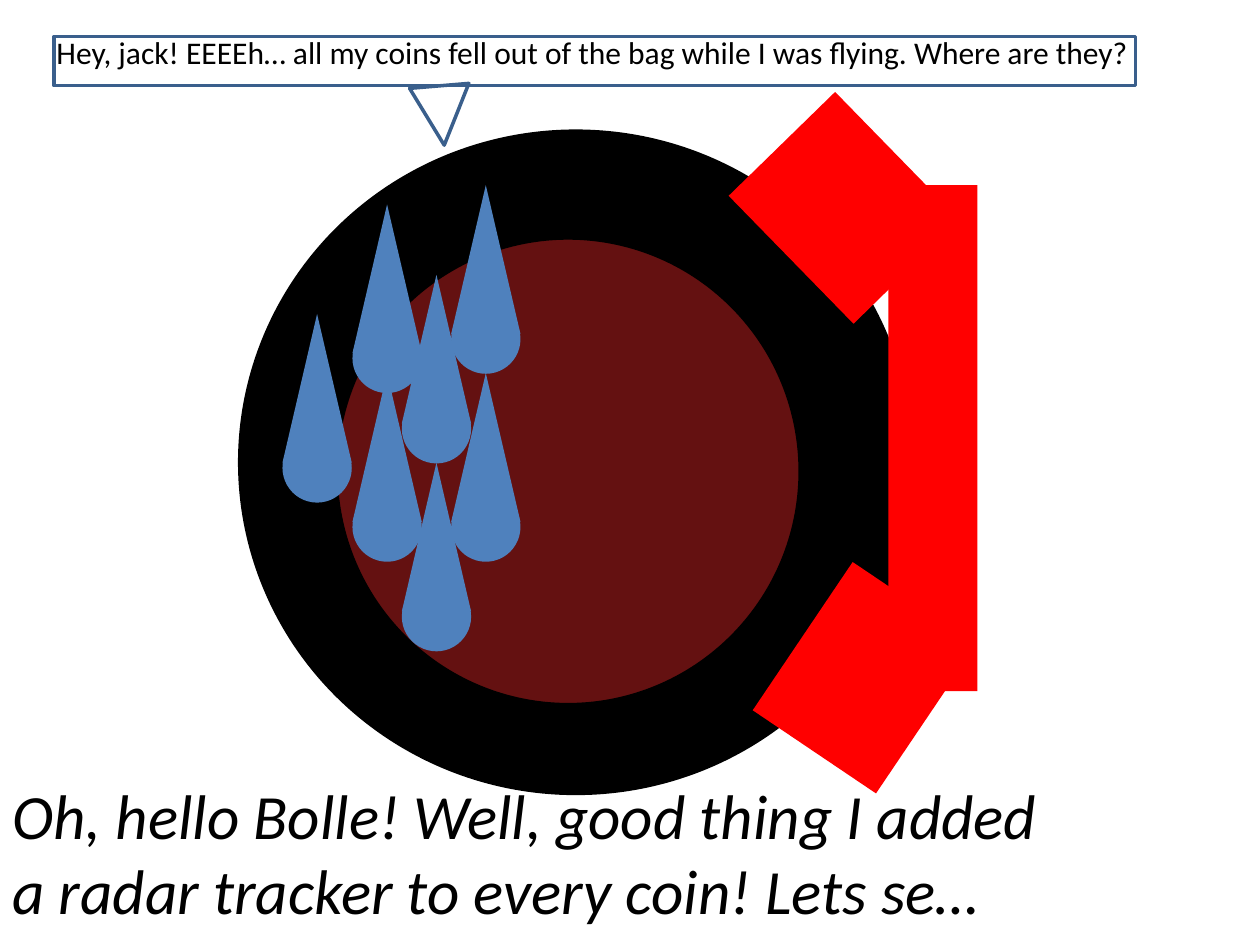
from pptx import Presentation
from pptx.dml.color import RGBColor
from pptx.enum.shapes import MSO_SHAPE
from pptx.enum.text import MSO_AUTO_SIZE
from pptx.util import Pt

BLACK = RGBColor(0x00, 0x00, 0x00)
MAROON = RGBColor(0x64, 0x11, 0x11)
RED = RGBColor(0xFF, 0x00, 0x00)
DROP_BLUE = RGBColor(0x4F, 0x81, 0xBD)
OUTLINE_BLUE = RGBColor(0x3A, 0x5F, 0x8C)

DROP_WIDTH, CONE_HEIGHT, BALL_OFFSET = 39.6, 85, 68.2
DROPS = [
    (229.6, 157), (257.8, 105.8), (257.8, 213.2), (201.4, 116.8),
    (161.4, 179.4), (201.4, 213.2), (229.6, 264.4),
]


def write_text(frame, text, size=18, color=BLACK, italic=None, wrap=True):
    frame.word_wrap = wrap
    frame.auto_size = MSO_AUTO_SIZE.SHAPE_TO_FIT_TEXT
    run = frame.paragraphs[0].add_run()
    run.text = text
    run.font.name = "Calibri"
    run.font.size = Pt(size)
    run.font.color.rgb = color
    run.font.italic = italic


class Scene:
    """Draws the comic scene in one style on the current slide."""

    def __init__(self, slide):
        self.slide = slide

    def figure(self, kind, box, fill=None, line=None, weight=2, rotation=0):
        part = self.slide.shapes.add_shape(kind, *map(Pt, box))
        part.shadow.inherit = False
        part.rotation = rotation
        if fill is None:
            part.fill.background()
        else:
            part.fill.solid()
            part.fill.fore_color.rgb = fill
        if line is None:
            part.line.fill.background()
        else:
            part.line.color.rgb = line
            part.line.width = Pt(weight)

    def drop(self, left, top):
        self.figure(MSO_SHAPE.ISOSCELES_TRIANGLE,
                    (left, top, DROP_WIDTH, CONE_HEIGHT), DROP_BLUE)
        self.figure(MSO_SHAPE.OVAL,
                    (left, top + BALL_OFFSET, DROP_WIDTH, DROP_WIDTH), DROP_BLUE)

    def speech(self, box, text, **text_format):
        spoken = self.slide.shapes.add_textbox(*map(Pt, box))
        write_text(spoken.text_frame, text, **text_format)


def main():
    deck = Presentation()
    deck.slide_width, deck.slide_height = Pt(720), Pt(540)
    scene = Scene(deck.slides.add_slide(deck.slide_layouts[6]))

    scene.figure(MSO_SHAPE.RECTANGLE, (31, 20.8, 618, 28.2), line=OUTLINE_BLUE)

    for box, fill in [((139, 77, 380, 374.4), BLACK),
                      ((190, 134, 269.3, 270.7), MAROON)]:
        scene.figure(MSO_SHAPE.OVAL, box, fill, line=BLACK, weight=6)

    for box, rotation in [((451.4, 336.2, 85, 102.2), 34),
                          ((440, 67.7, 85, 102.2), 315.7),
                          ((507.6, 105.8, 51, 289.2), 0)]:
        scene.figure(MSO_SHAPE.RECTANGLE, box, RED, rotation=rotation)

    for left, top in DROPS:
        scene.drop(left, top)

    scene.speech(
        (25.2, 15.1, 653, 29),
        "Hey, jack! EEEEh… all my coins fell out of the bag while I was flying. Where are they?",
        wrap=False)
    scene.speech(
        (0, 440, 607, 94.5),
        "Oh, hello Bolle! Well, good thing I added a radar tracker to every coin! Lets se…",
        size=36, italic=True)
    scene.figure(MSO_SHAPE.ISOSCELES_TRIANGLE, (235.4, 49, 34, 34),
                 line=OUTLINE_BLUE, rotation=175.2)

    deck.save("out.pptx")


if __name__ == "__main__":
    main()
